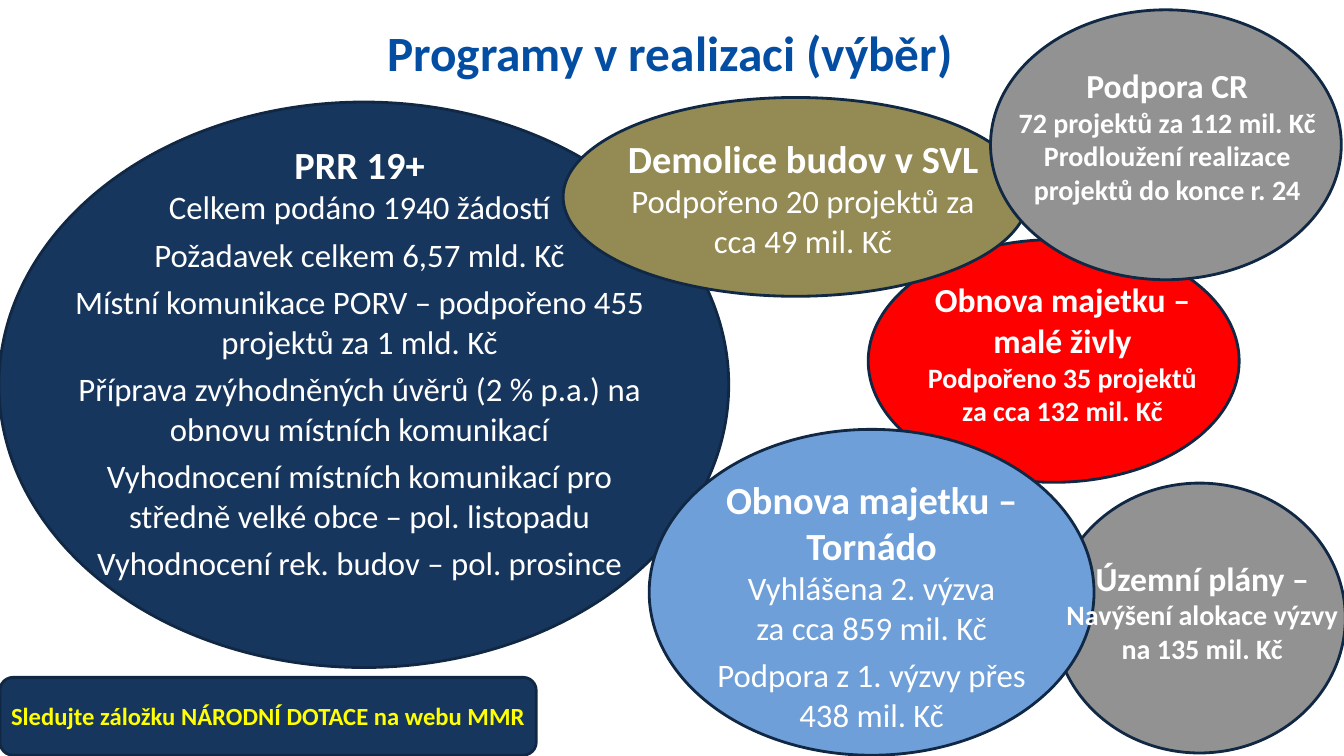
from pptx import Presentation
from pptx.dml.color import RGBColor
from pptx.enum.shapes import MSO_SHAPE as Preset
from pptx.enum.text import MSO_ANCHOR as Anchor, MSO_AUTO_SIZE as AutoSize, PP_ALIGN as Align
from pptx.util import Inches, Pt

TITLE = "Programy v realizaci (výběr)"
TITLE_AREA = (5.9, 3.1, 87.9, 13.2)

BUBBLES = [
    ("grey", Preset.OVAL, (78.4, 63.9, 21.7, 35.7)),
    ("red", Preset.OVAL, (64.6, 31.7, 27.6, 32.1)),
    ("navy", Preset.OVAL, (-0.08, 13.5, 54.3, 74.8)),
    ("olive", Preset.OVAL, (41.9, 12.9, 34.6, 26.3)),
    ("sky", Preset.OVAL, (48.3, 56.8, 33.1, 43.1)),
    ("navy", Preset.ROUNDED_RECTANGLE, (0, 89.6, 39.9, 10.3)),
    ("grey", Preset.OVAL, (73.7, 1.3, 26.1, 35.7)),
]

TEXTS = [
    ((4.6, 18, 44.3, 60.4), [
        ("program", "PRR 19+"),
        ("detail", "Celkem podáno 1940 žádostí"),
        ("detail", "Požadavek celkem 6,57 mld. Kč"),
        ("detail", "Místní komunikace PORV – podpořeno 455 projektů za 1 mld. Kč"),
        ("detail", "Příprava zvýhodněných úvěrů (2 % p.a.) na obnovu místních komunikací"),
        ("detail", "Vyhodnocení místních komunikací pro středně velké obce – pol. listopadu"),
        ("detail", "Vyhodnocení rek. budov – pol. prosince"),
    ]),
    ((45.7, 17.2, 28.1, 18), [
        ("program", "Demolice budov v SVL"),
        ("detail", "Podpořeno 20 projektů za cca 49 mil. Kč"),
    ]),
    ((50.8, 62.3, 28.1, 35.7), [
        ("program", "Obnova majetku – Tornádo"),
        ("tight", "Vyhlášena 2. výzva"),
        ("detail", "za cca 859 mil. Kč"),
        ("detail", "Podpora z 1. výzvy přes 438 mil. Kč"),
    ]),
    ((-1.35, 92.1, 42.6, 5.2), [
        ("notice", "Sledujte záložku NÁRODNÍ DOTACE na webu MMR"),
    ]),
    ((68, 36.3, 22.1, 21.1), [
        ("minor", "Obnova majetku – malé živly"),
        ("fact", "Podpořeno 35 projektů za cca 132 mil. Kč"),
    ]),
    ((78.4, 73.1, 22.1, 15.7), [
        ("minor", "Územní plány –"),
        ("fact", "Navýšení alokace výzvy na 135 mil. Kč"),
    ]),
    ((74.9, 7.9, 23.9, 20.1), [
        ("minor", "Podpora CR"),
        ("fact", "72 projektů za 112 mil. Kč"),
        ("fact", "Prodloužení realizace projektů do konce r. 24"),
    ]),
]

THEME = {
    "font": "Calibri",
    "outline": 2,
    "colors": {
        "navy": "17365D", "olive": "948A54", "sky": "6F9FD9", "red": "FF0000",
        "grey": "929292", "edge": "112845", "title": "034EA2",
        "white": "FFFFFF", "yellow": "FFFF00",
    },
    "styles": {
        "title": {"size": 35.2, "bold": True, "color": "title", "after": 0, "spacing": 0.9},
        "program": {"size": 27.4, "bold": True, "color": "white", "after": 0, "spacing": 1},
        "detail": {"size": 23.4, "bold": False, "color": "white", "after": 5.9, "spacing": 1},
        "tight": {"size": 23.4, "bold": False, "color": "white", "after": 0, "spacing": 1},
        "minor": {"size": 24, "bold": True, "color": "white", "after": 0, "spacing": 1},
        "fact": {"size": 20, "bold": True, "color": "white", "after": 0, "spacing": 1},
        "notice": {"size": 17.6, "bold": True, "color": "yellow", "after": 0, "spacing": 1},
    },
}


def color(name):
    return RGBColor.from_string(THEME["colors"][name])


def assign(target, values):
    for name, value in values.items():
        setattr(target, name, value)


def area(deck, shares):
    sides = (deck.slide_width, deck.slide_height) * 2
    return [int(side * share / 100) for side, share in zip(sides, shares)]


def write(frame, lines):
    assign(frame, {"word_wrap": True, "vertical_anchor": Anchor.TOP})
    for index, (style_name, text) in enumerate(lines):
        style = THEME["styles"][style_name]
        para = frame.add_paragraph() if index else frame.paragraphs[0]
        assign(para, {
            "alignment": Align.CENTER, "space_before": Pt(0),
            "space_after": Pt(style["after"]), "line_spacing": style["spacing"],
        })
        span = para.add_run()
        span.text = text
        assign(span.font, {
            "name": THEME["font"], "size": Pt(style["size"]), "bold": style["bold"],
        })
        span.font.color.rgb = color(style["color"])


def add_bubble(deck, page, fill, preset, shares):
    bubble = page.shapes.add_shape(preset, *area(deck, shares))
    bubble.shadow.inherit = False
    bubble.fill.solid()
    bubble.fill.fore_color.rgb = color(fill)
    bubble.line.color.rgb = color("edge")
    bubble.line.width = Pt(THEME["outline"])


def main():
    deck = Presentation()
    assign(deck, {"slide_width": Inches(13.33), "slide_height": Inches(7.5)})
    page = deck.slides.add_slide(deck.slide_layouts[5])
    title = page.shapes.title
    assign(title, dict(zip(("left", "top", "width", "height"), area(deck, TITLE_AREA))))
    write(title.text_frame, [("title", TITLE)])
    for fill, preset, shares in BUBBLES:
        add_bubble(deck, page, fill, preset, shares)
    for shares, lines in TEXTS:
        box = page.shapes.add_textbox(*area(deck, shares))
        write(box.text_frame, lines)
        box.text_frame.auto_size = AutoSize.SHAPE_TO_FIT_TEXT
    deck.save("out.pptx")


if __name__ == "__main__":
    main()
